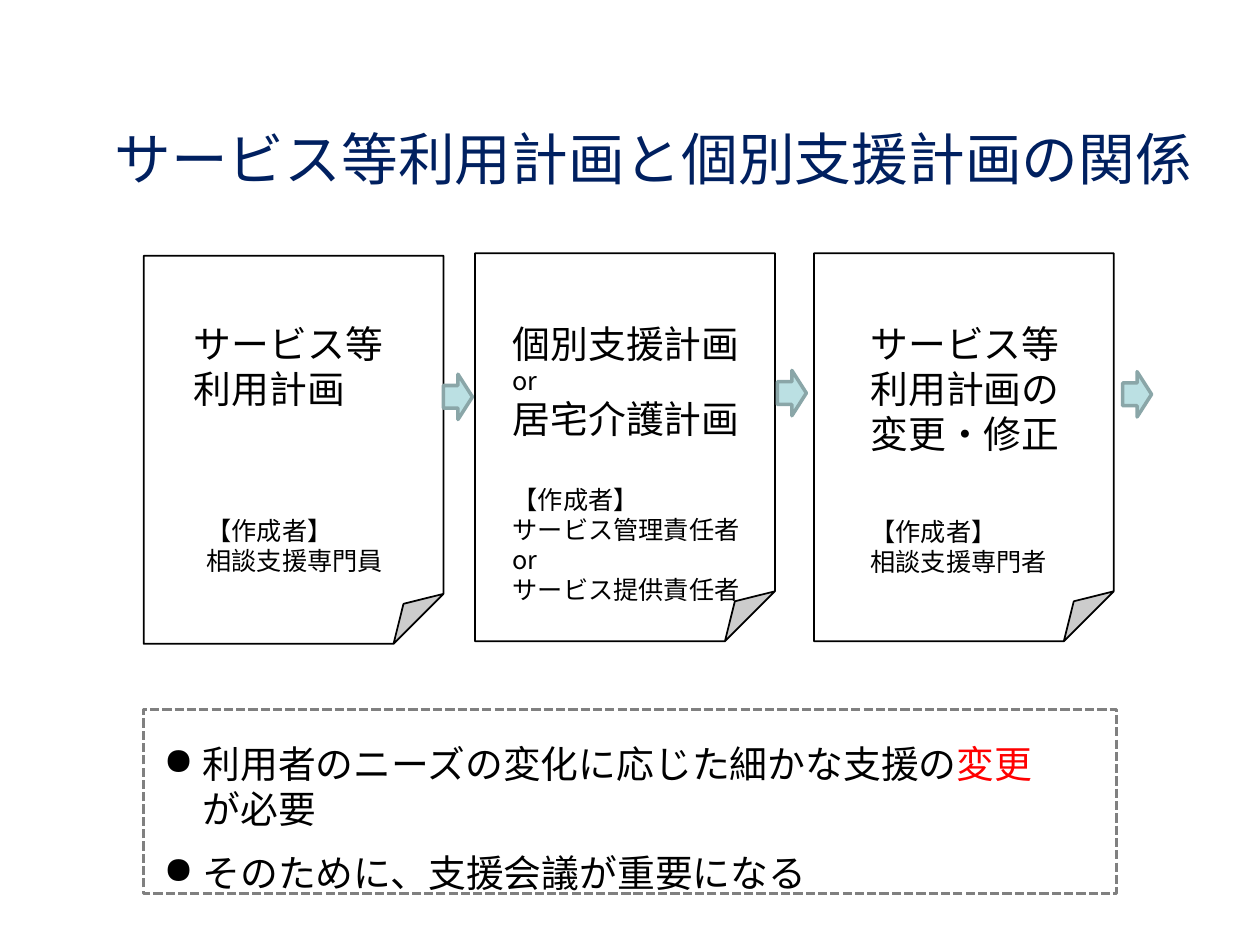
from lxml import etree
from pptx import Presentation
from pptx.dml.color import RGBColor
from pptx.enum.dml import MSO_LINE
from pptx.enum.shapes import MSO_SHAPE
from pptx.enum.text import MSO_ANCHOR, PP_ALIGN
from pptx.oxml.ns import qn
from pptx.util import Inches, Pt

SHEET = MSO_SHAPE.FOLDED_CORNER
ARROW = MSO_SHAPE.RIGHT_ARROW
FRAME = MSO_SHAPE.RECTANGLE
DASH = MSO_LINE.SQUARE_DOT
MIDDLE = MSO_ANCHOR.MIDDLE
CENTER = PP_ALIGN.CENTER

FONT = "Noto Sans CJK JP"
COLORS = {
    "text": "000000", "title": "002060", "accent": "FF0000", "paper": "FFFFFF",
    "arrow": "BBE0E3", "arrow_line": "8AA6A8", "frame": "808080",
}
LARGE, SMALL, TITLE_SIZE = 21.6, 14.4, 32.4
LINE_PITCH = 1.19

TITLE = "　サービス等利用計画と個別支援計画の関係"
PLANS = [
    {
        "sheet": (1.14, 2.03), "name_at": (1.44, 2.5, 1.72, 0.83),
        "name": [("サービス等", LARGE), ("利用計画", LARGE)],
        "author_at": (1.54, 4.04, 1.61, 0.59),
        "author": ["【作成者】", "相談支援専門員"],
        "arrow": (3.52, 2.97),
    },
    {
        "sheet": (3.77, 2.01), "name_at": (3.97, 2.5, 2.02, 1.07),
        "name": [("個別支援計画", LARGE), ("or", SMALL), ("居宅介護計画", LARGE)],
        "author_at": (3.97, 3.8, 2.02, 1.07),
        "author": ["【作成者】", "サービス管理責任者", "or", "サービス提供責任者"],
        "arrow": (6.17, 2.94),
    },
    {
        "sheet": (6.46, 2.01), "name_at": (6.81, 2.5, 1.72, 1.19),
        "name": [("サービス等", LARGE), ("利用計画の", LARGE), ("変更・修正", LARGE)],
        "author_at": (6.81, 4.05, 1.61, 0.59),
        "author": ["【作成者】", "相談支援専門者"],
        "arrow": (8.91, 2.95),
    },
]
POINTS = [
    [("利用者のニーズの変化に応じた細かな支援の", "text"), ("変更", "accent"), ("が必要", "text")],
    [("そのために、支援会議が重要になる", "text")],
]


def color(name):
    return RGBColor.from_string(COLORS[name])


def add_outline(slide, kind, box, fill, line, width):
    shape = slide.shapes.add_shape(kind, *map(Inches, box))
    shape.shadow.inherit = False
    if fill:
        shape.fill.solid()
        shape.fill.fore_color.rgb = color(fill)
    else:
        shape.fill.background()
    shape.line.color.rgb = color(line)
    shape.line.width = Pt(width)
    return shape


def add_text(slide, box, lines, wrap=False):
    frame = slide.shapes.add_textbox(*map(Inches, box)).text_frame
    frame.word_wrap = wrap
    for index, (runs, size) in enumerate(lines):
        paragraph = frame.paragraphs[0] if index == 0 else frame.add_paragraph()
        paragraph.line_spacing = Pt(round(size * LINE_PITCH, 1))
        for text, color_name in runs:
            run = paragraph.add_run()
            run.text = text
            for name, value in {"size": Pt(size), "name": FONT}.items():
                setattr(run.font, name, value)
            run.font.color.rgb = color(color_name)
            east_asian = etree.SubElement(run.font._element, qn("a:ea"))
            east_asian.set("typeface", FONT)
    return frame


def add_bullet(paragraph):
    properties = paragraph._p.get_or_add_pPr()
    properties.set("marL", str(Inches(0.31)))
    properties.set("indent", str(-Inches(0.31)))
    etree.SubElement(properties, qn("a:buChar")).set("char", "●")


def main():
    presentation = Presentation()
    presentation.slide_width, presentation.slide_height = Inches(10), Inches(7.5)
    slide = presentation.slides.add_slide(presentation.slide_layouts[6])

    for plan in PLANS:
        add_outline(slide, SHEET, (*plan["sheet"], 2.38, 3.08), "paper", "text", 1)
        add_text(slide, plan["name_at"], [([(text, "text")], size) for text, size in plan["name"]])
        add_text(slide, plan["author_at"], [([(text, "text")], SMALL) for text in plan["author"]])

    points = add_text(slide, (1.2, 5.83, 7.37, 0.98), [(runs, LARGE) for runs in POINTS], wrap=True)
    for paragraph in points.paragraphs:
        add_bullet(paragraph)
    points.paragraphs[1].space_before = Pt(10.8)
    border = add_outline(slide, FRAME, (1.14, 5.63, 7.72, 1.46), None, "frame", 1.75)
    border.line.dash_style = DASH

    title = add_text(slide, (0.31, 0.99, 9.3, 0.52), [([(TITLE, "title")], TITLE_SIZE)], wrap=True)
    title.vertical_anchor = MIDDLE
    for name, value in {"alignment": CENTER, "line_spacing": 1.0}.items():
        setattr(title.paragraphs[0], name, value)

    for plan in PLANS:
        add_outline(slide, ARROW, (*plan["arrow"], 0.23, 0.36), "arrow", "arrow_line", 2)

    presentation.save("out.pptx")


if __name__ == "__main__":
    main()
